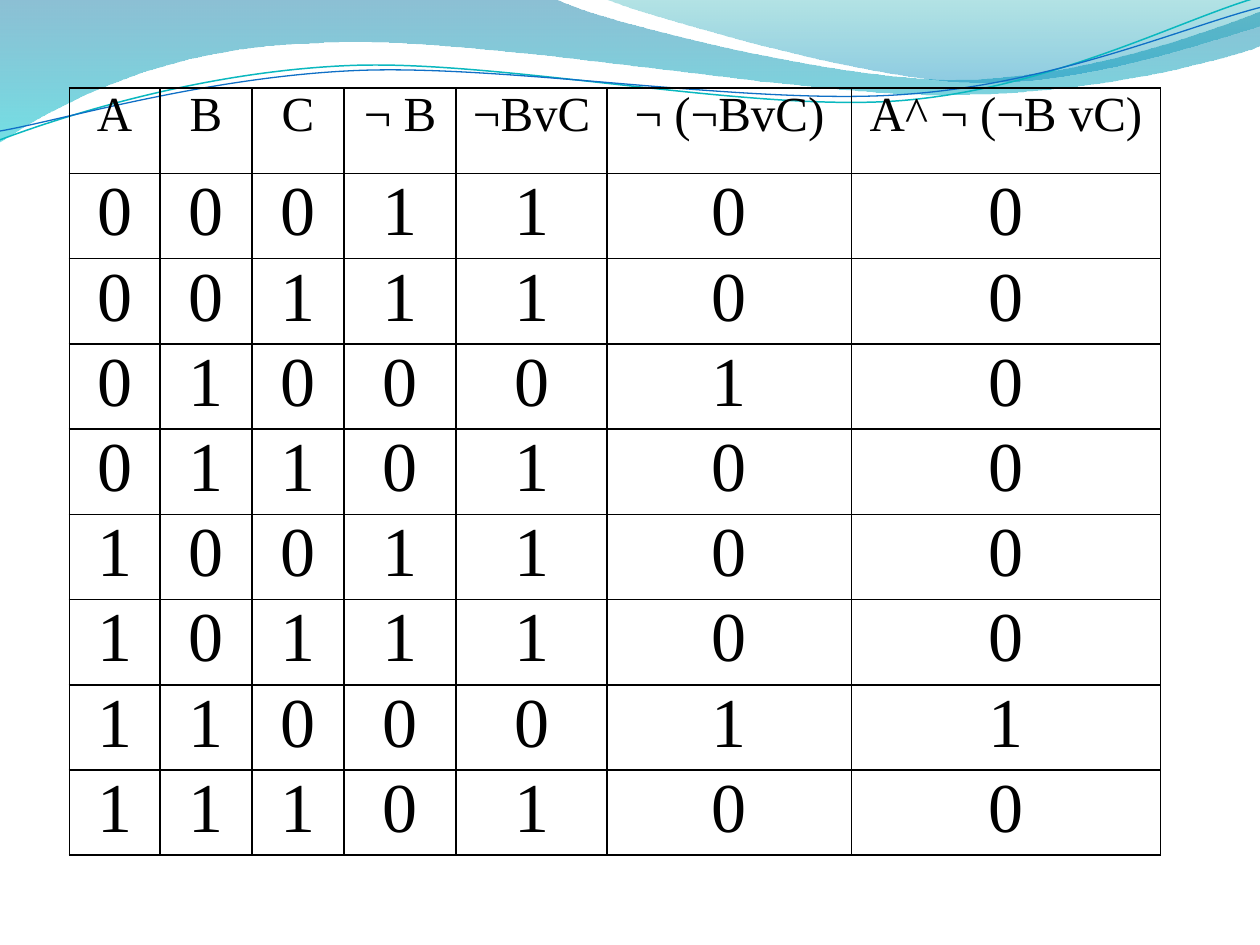
"""Build a slide with the truth table of A^ ¬ (¬B vC) under a wave header."""
from itertools import product
from math import cos, radians, sin

from lxml.etree import SubElement
from pptx import Presentation
from pptx.dml.color import RGBColor
from pptx.enum.text import PP_ALIGN as Align
from pptx.oxml.ns import qn
from pptx.util import Inches, Pt

BLACK = RGBColor(0x00, 0x00, 0x00)
DEEP_BLUE = RGBColor(0x00, 0x74, 0xA1)
AQUA = RGBColor(0x00, 0xC6, 0xCF)
TEAL = RGBColor(0x00, 0xA1, 0xA9)
SKY = RGBColor(0x00, 0x8B, 0xBF)
LINE_TEAL = RGBColor(0x0A, 0xB8, 0xBF)
LINE_BLUE = RGBColor(0x0F, 0x6F, 0xC6)
FONT = "Times New Roman"
TILT = 2.7


def add_outline(page, start, segments, close):
    points = [pair for segment in segments for pair in zip(segment[::2], segment[1::2])]
    builder = page.shapes.build_freeform(Inches(start[0]), Inches(start[1]))
    builder.add_line_segments([(Inches(x), Inches(y)) for x, y in points], close=close)
    outline = builder.convert_to_shape()
    outline.shadow.inherit = False
    lines = iter(list(outline._element.iter(qn("a:lnTo"))))
    for segment in segments:
        first = next(lines)
        if len(segment) == 6:
            first.tag = qn("a:cubicBezTo")
            for line in (next(lines), next(lines)):
                first.append(line[0])
                line.getparent().remove(line)
    return outline


def level(point, centre):
    dx, dy = point[0] - centre[0], point[1] - centre[1]
    angle = radians(TILT)
    return (centre[0] + dx * cos(angle) - dy * sin(angle),
            centre[1] + dx * sin(angle) + dy * cos(angle))


deck = Presentation()
deck.slide_width, deck.slide_height = Inches(10), Inches(7.5)
page = deck.slides.add_slide(deck.slide_layouts[6])

waves = [
    ((0, 0),
     [(4.4, -0.01), (4.76, 0.17, 6.64, 0.63, 7.58, 0.63), (8.53, 0.63, 9.58, 0.26, 10, 0.09),
      (10.01, 0.36), (9.83, 0.44, 8.7, 0.76, 7.46, 0.75), (6.22, 0.75, 3.82, 0.28, 2.57, 0.34),
      (1.29, 0.36, 0.46, 0.83, -0.01, 1.13)],
     [(DEEP_BLUE, 45), (AQUA, 55)]),
    ((4.79, -0.01),
     [(5.09, 0.11, 6.82, 0.62, 7.69, 0.65), (8.56, 0.69, 9.61, 0.32, 10, 0.21), (10, 0)],
     [(TEAL, 30), (SKY, 45)]),
]
for start, segments, colours in waves:
    wave = add_outline(page, start, segments, True)
    wave.line.fill.background()
    wave.fill.gradient()
    wave.fill.gradient_angle = 270
    for stop, position, (colour, opacity) in zip(wave.fill.gradient_stops, (0, 1), colours):
        stop.position = position
        stop.color.rgb = colour
    for node, (colour, opacity) in zip(wave._element.spPr.iter(qn("a:srgbClr")), colours):
        SubElement(node, qn("a:alpha"), val=str(opacity * 1000))

curves = [
    ((0, 1.11),
     [(0.48, 0.93, 1.58, 0.57, 2.77, 0.52), (3.95, 0.47, 5.93, 0.89, 7.13, 0.8),
      (8.33, 0.71, 9.38, 0.15, 9.98, -0.02)], (4.99, 0.57), LINE_TEAL, 0.85),
    ((0, 1.04),
     [(0.47, 0.96, 1.64, 0.61, 2.83, 0.56), (4.03, 0.51, 5.97, 0.84, 7.17, 0.75),
      (8.36, 0.67, 9.41, 0.21, 10, 0.06)], (5, 0.59), LINE_BLUE, 0.75),
]
for start, segments, centre, colour, width in curves:
    flat = [sum((level(pair, centre) for pair in zip(segment[::2], segment[1::2])), ())
            for segment in segments]
    curve = add_outline(page, level(start, centre), flat, False)
    curve.rotation = 360 - TILT
    curve.fill.background()
    curve.line.color.rgb = colour
    curve.line.width = Pt(width)

rows = [["A", "B", "C", "¬ B", "¬BvC", "¬ (¬BvC)", "A^ ¬ (¬B vC)"]]
for a, b, c in product((0, 1), repeat=3):
    not_b = 1 - b
    either = not_b | c
    rows.append([a, b, c, not_b, either, 1 - either, a & (1 - either)])

widths = [0.72, 0.73, 0.73, 0.89, 1.2, 1.94, 2.45]
frame = page.shapes.add_table(len(rows), len(widths), Inches(0.55), Inches(0.7),
                              Inches(8.67), Inches(6.09))
table = frame.table
table.first_row = table.horz_banding = False
for column, width in zip(table.columns, widths):
    column.width = Inches(width)

for row_number, values in enumerate(rows):
    table.rows[row_number].height = Inches(6.09 / len(rows))
    for column_number, value in enumerate(values):
        cell = table.cell(row_number, column_number)
        cell.margin_left = cell.margin_right = Inches(0.07)
        cell.margin_top = cell.margin_bottom = 0
        para = cell.text_frame.paragraphs[0]
        para.text = str(value)
        para.alignment = Align.CENTER
        font = para.runs[0].font
        font.name, font.size = FONT, Pt(40 if row_number else 28)
        font.color.rgb = BLACK
        properties = cell._tc.get_or_add_tcPr()
        for side in ("a:lnL", "a:lnR", "a:lnT", "a:lnB"):
            border = SubElement(properties, qn(side), w=str(Pt(1)))
            SubElement(SubElement(border, qn("a:solidFill")), qn("a:srgbClr"), val=str(BLACK))
        cell.fill.background()

deck.save("out.pptx")
